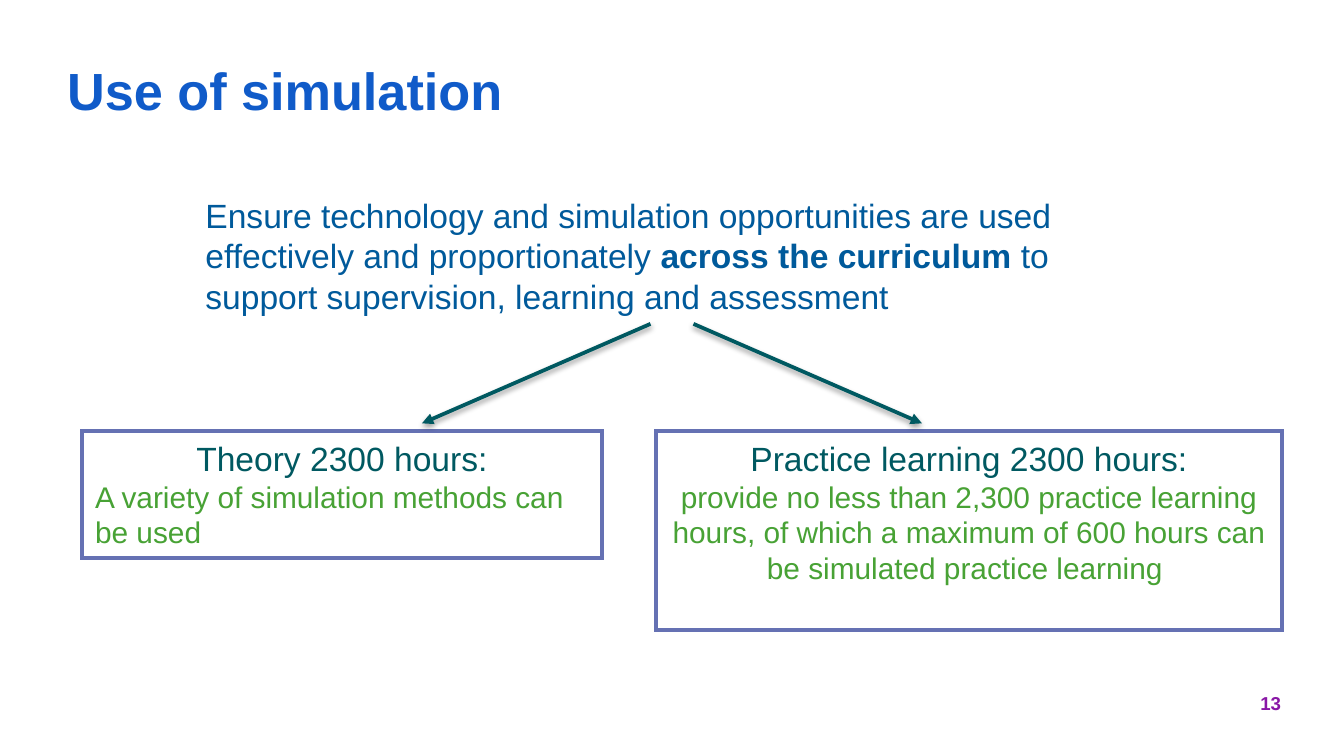
from dataclasses import dataclass

from lxml.etree import SubElement
from pptx import Presentation
from pptx.dml.color import RGBColor
from pptx.enum.shapes import MSO_CONNECTOR, MSO_SHAPE
from pptx.enum.text import MSO_ANCHOR, MSO_AUTO_SIZE, PP_ALIGN
from pptx.oxml.ns import qn
from pptx.util import Inches, Pt

FONT = "Arial"
TITLE_BLUE = RGBColor(0x10, 0x5B, 0xC9)
TEXT_BLUE = RGBColor(0x00, 0x5A, 0x9B)
TEAL = RGBColor(0x00, 0x59, 0x61)
GREEN = RGBColor(0x48, 0xA2, 0x35)
BORDER = RGBColor(0x65, 0x71, 0xB3)
PURPLE = RGBColor(0x89, 0x17, 0xA6)

CENTER_X = 5.0
ARROW_TOP, ARROW_BOTTOM = 2.41, 3.15
ARROW_START, ARROW_END = 0.16, 1.86  # distances from the slide's centre line
BOX_TOP = 3.21


@dataclass
class HoursBox:
    left: float
    width: float
    height: float
    heading: str
    detail: str
    detail_align: PP_ALIGN


BOXES = [
    HoursBox(0.61, 3.87, 0.94, "Theory 2300 hours:",
             "A variety of simulation methods can be used", PP_ALIGN.LEFT),
    HoursBox(4.88, 4.66, 1.48, "Practice learning 2300 hours:",
             "provide no less than 2,300 practice learning hours, of which a maximum "
             "of 600 hours can be simulated practice learning ", PP_ALIGN.CENTER),
]


def add_run(p, text: str, *, size: float, color: RGBColor, bold: bool = False) -> None:
    r = p.add_run()
    r.text = text
    r.font.name = FONT
    r.font.size = Pt(size)
    r.font.bold = bold
    r.font.color.rgb = color


def set_frame(tf, inset_x: float = 0.1, inset_y: float = 0.05) -> None:
    tf.word_wrap = True
    tf.auto_size = MSO_AUTO_SIZE.NONE
    tf.vertical_anchor = MSO_ANCHOR.TOP
    tf.margin_left = tf.margin_right = Inches(inset_x)
    tf.margin_top = tf.margin_bottom = Inches(inset_y)


def add_text_box(s, left: float, top: float, width: float, height: float):
    sp = s.shapes.add_textbox(Inches(left), Inches(top), Inches(width), Inches(height))
    set_frame(sp.text_frame)
    return sp.text_frame.paragraphs[0]


def add_hours_box(s, box: HoursBox) -> None:
    sp = s.shapes.add_shape(MSO_SHAPE.RECTANGLE, Inches(box.left), Inches(BOX_TOP),
                            Inches(box.width), Inches(box.height))
    sp.shadow.inherit = False
    sp.fill.background()
    sp.line.color.rgb = BORDER
    sp.line.width = Pt(2.25)
    SubElement(sp.line._get_or_add_ln(), qn("a:miter"), lim="800000")  # sharp corners
    tf = sp.text_frame
    set_frame(tf)
    p = tf.paragraphs[0]
    p.alignment = PP_ALIGN.CENTER
    add_run(p, box.heading, size=18, color=TEAL)
    p = tf.add_paragraph()
    p.alignment = box.detail_align
    add_run(p, box.detail, size=16, color=GREEN)


def add_arrow(s, side: int) -> None:
    """Draw an arrow down to the left (side -1) or to the right (side 1)."""
    line = s.shapes.add_connector(
        MSO_CONNECTOR.STRAIGHT,
        Inches(CENTER_X + side * ARROW_START), Inches(ARROW_TOP),
        Inches(CENTER_X + side * ARROW_END), Inches(ARROW_BOTTOM))
    line.line.color.rgb = TEAL
    line.line.width = Pt(2)
    SubElement(line.line._get_or_add_ln(), qn("a:tailEnd"), type="triangle")
    # Soft shadow straight below the line
    effects = SubElement(line._element.spPr, qn("a:effectLst"))
    shadow = SubElement(effects, qn("a:outerShdw"), blurRad=str(Pt(3.1)),
                        dist=str(Pt(1.6)), dir="5400000", rotWithShape="0")
    color = SubElement(shadow, qn("a:srgbClr"), val="000000")
    SubElement(color, qn("a:alpha"), val="38000")


def main() -> None:
    prs = Presentation()
    prs.slide_width = Inches(10)
    prs.slide_height = prs.slide_width * 9 // 16
    s = prs.slides.add_slide(prs.slide_layouts[5])

    # Title
    title = s.shapes.title
    title.left, title.top = Inches(0.43), Inches(0.39)
    title.width, title.height = Inches(5.41), Inches(0.75)
    set_frame(title.text_frame, 0.07, 0.04)
    p = title.text_frame.paragraphs[0]
    p.alignment = PP_ALIGN.LEFT
    add_run(p, "Use of simulation", size=28, color=TITLE_BLUE, bold=True)

    # Main statement
    p = add_text_box(s, 1.43, 1.4, 6.81, 1.01)
    for text, bold in [
        ("Ensure technology and simulation opportunities are used effectively "
         "and proportionately ", False),
        ("across the curriculum", True),
        (" to support supervision, learning and assessment", False),
    ]:
        add_run(p, text, size=18, color=TEXT_BLUE, bold=bold)

    # Hours boxes and the arrows leading to them
    for box in BOXES:
        add_hours_box(s, box)
    for side in (-1, 1):
        add_arrow(s, side)

    # Slide number
    p = add_text_box(s, 7.46, 5.18, 2.17, 0.15)
    p.alignment = PP_ALIGN.RIGHT
    p.line_spacing = Pt(6)
    add_run(p, "13", size=10, color=PURPLE, bold=True)

    prs.save("out.pptx")


if __name__ == "__main__":
    main()
